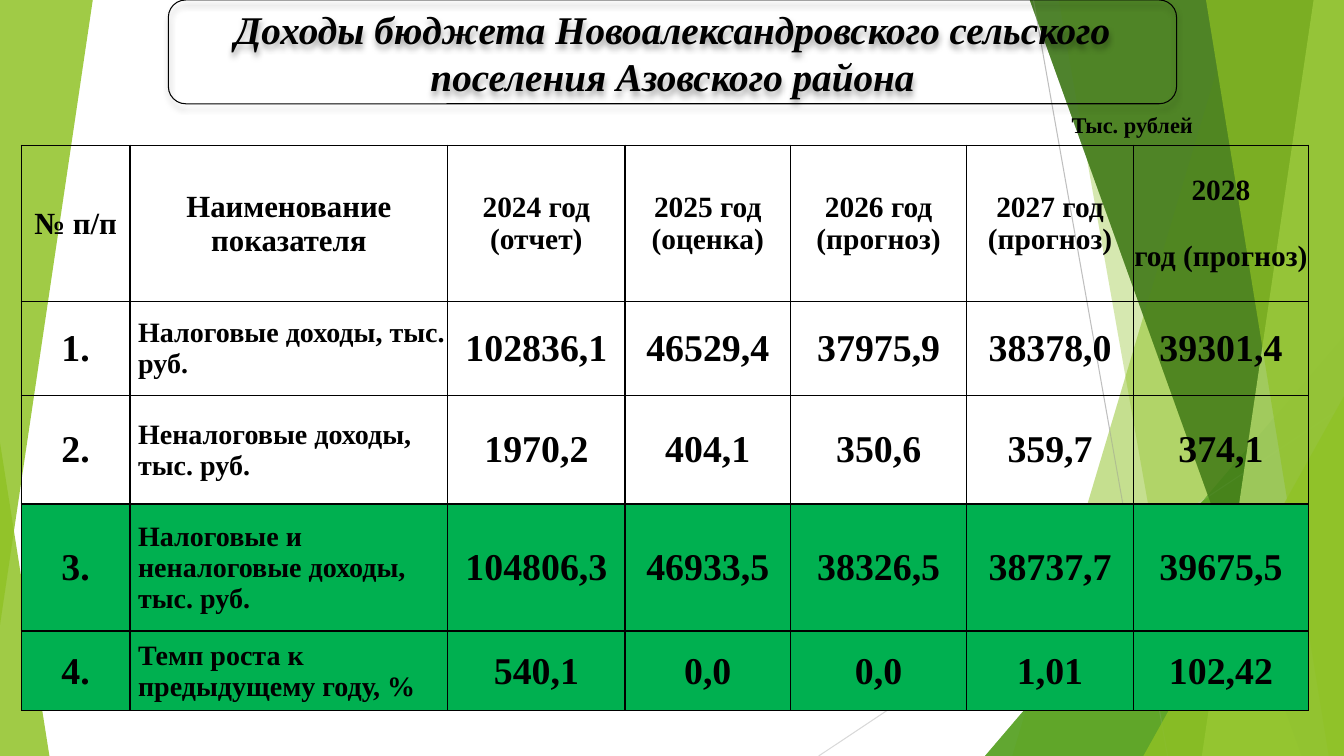
from lxml import etree
from pptx import Presentation
from pptx import util as u
from pptx.dml.color import RGBColor
from pptx.enum import shapes, text
from pptx.oxml import ns

FONT = "Times New Roman"
BLACK = RGBColor(0x00, 0x00, 0x00)
TOTAL = RGBColor(0x00, 0xB0, 0x50)
LIME = RGBColor(0x90, 0xC2, 0x26)
GREEN = RGBColor(0x54, 0xA0, 0x21)
DARK = RGBColor(0x3F, 0x78, 0x19)
PALE = RGBColor(0xC0, 0xE4, 0x74)
GREY = RGBColor(0xBF, 0xBF, 0xBF)
LIGHT = RGBColor(0xD9, 0xD9, 0xD9)

# Content
TITLE = "Доходы бюджета Новоалександровского сельского поселения Азовского района"
UNITS = "Тыс. рублей"
ROWS = [
    ["№ п/п", "Наименование показателя", "2024 год\n(отчет)", "2025 год (оценка)",
     "2026 год (прогноз)", "2027 год (прогноз)", "2028\nгод (прогноз)"],
    ["1.", "Налоговые доходы, тыс. руб.",
     "102836,1", "46529,4", "37975,9", "38378,0", "39301,4"],
    ["2.", "Неналоговые доходы,\nтыс. руб.", "1970,2", "404,1", "350,6", "359,7", "374,1"],
    ["3.", "Налоговые и неналоговые доходы, тыс. руб.",
     "104806,3", "46933,5", "38326,5", "38737,7", "39675,5"],
    ["4.", "Темп роста к предыдущему году, %", "540,1", "0,0", "0,0", "1,01", "102,42"],
]
COLS = [1.08, 3.15, 1.76, 1.64, 1.75, 1.65, 1.74]
HEIGHTS = [1.55, 0.93, 1.08, 1.26, 0.79]
FIRST_TOTAL_ROW = 3

# Facets: top edge and bottom edge x of the slanted side, colour, opacity
# Triangles: left, top, width, height, apex, rotation, colour, opacity
TOP, BOTTOM, RIGHT = -0.01, 7.5, 13.33
RIGHT_FACETS = [
    (12.28, 10.04, LIME, 30),
    (10.5, 11.83, LIME, 20),
    (9.77, 3.33, 3.56, 4.17, 1, 0, GREEN, 72),
    (10.21, 12.91, DARK, 70),
    (13.03, 11.92, PALE, 70),
    (11.96, 13.18, LIME, 65),
    (11.34, 3.93, 1.99, 3.57, 1, 0, LIME, 80),
]
LOWER_LEFT = (0, 4.39, 0.49, 3.11, 0, 0, LIME, 85)
UPPER_LEFT = (0, 0, 0.92, 6.2, 1, 180, LIME, 85)
RAYS = [(10.25, 0, 11.58, 7.5, GREY), (13.33, 4.03, 8.12, 7.5, LIGHT)]

prs = Presentation()
prs.slide_width, prs.slide_height = u.Inches(13.33), u.Inches(7.5)
s = prs.slides.add_slide(prs.slide_layouts[6])


def sub(parent, tag, **attrs):
    return etree.SubElement(parent, ns.qn(tag), attrs)


def paint(sp, color, opacity):
    sp.shadow.inherit = False
    sp.fill.solid()
    sp.fill.fore_color.rgb = color
    sp.line.fill.background()
    clr = sp.fill._xPr.find(".//" + ns.qn("a:srgbClr"))
    sub(clr, "a:alpha", val=str(opacity * 1000))


def add_facet(top_x, bottom_x, color, opacity):
    points = [(top_x, TOP), (RIGHT, TOP), (RIGHT, BOTTOM), (bottom_x, BOTTOM)]
    points = [(u.Inches(x), u.Inches(y)) for x, y in points]
    builder = s.shapes.build_freeform(*points[0], scale=1.0)
    builder.add_line_segments(points[1:], close=True)
    paint(builder.convert_to_shape(), color, opacity)


def add_triangle(x, y, w, h, apex, rotation, color, opacity):
    sp = s.shapes.add_shape(shapes.MSO_SHAPE.ISOSCELES_TRIANGLE,
                            *map(u.Inches, (x, y, w, h)))
    sp.adjustments[0] = apex
    sp.rotation = rotation
    paint(sp, color, opacity)


def add_right_facets():
    for facet in RIGHT_FACETS:
        (add_facet if len(facet) == 4 else add_triangle)(*facet)


def write(tf, content, size, align, italic=False, gap=0):
    style = {"name": FONT, "size": u.Pt(size), "bold": True, "italic": italic}
    for i, line in enumerate(content.split("\n")):
        p = tf.paragraphs[0] if i == 0 else tf.add_paragraph()
        p.alignment = align
        if i and gap:
            p.space_before = u.Pt(gap)
        r = p.add_run()
        r.text = line
        for key, value in style.items():
            setattr(r.font, key, value)
        r.font.color.rgb = BLACK


def set_borders(cell):
    tcPr = cell._tc.get_or_add_tcPr()
    for side in ("L", "R", "T", "B"):
        ln = sub(tcPr, "a:ln" + side, w=str(u.Pt(1)))
        sub(sub(ln, "a:solidFill"), "a:srgbClr", val=str(BLACK))


# Background
add_right_facets()
add_triangle(*LOWER_LEFT)
for x1, y1, x2, y2, color in RAYS:
    ray = s.shapes.add_connector(shapes.MSO_CONNECTOR.STRAIGHT,
                                 *map(u.Inches, (x1, y1, x2, y2)))
    ray.line.color.rgb = color
    ray.line.width = u.Pt(0.75)
    sub(ray._element.spPr, "a:effectLst")
add_right_facets()
add_triangle(*UPPER_LEFT)

# Income table
table = s.shapes.add_table(len(ROWS), len(COLS), u.Inches(0.21), u.Inches(1.44),
                           u.Inches(sum(COLS)), u.Inches(sum(HEIGHTS))).table
table.first_row = table.horz_banding = False
for column, width in zip(table.columns, COLS):
    column.width = u.Inches(width)
for r, (row, height) in enumerate(zip(ROWS, HEIGHTS)):
    table.rows[r].height = u.Inches(height)
    for c, content in enumerate(row):
        cell = table.cell(r, c)
        label = r > 0 and c == 1
        layout = {"margin_left": u.Inches(0.08 if label else 0.01),
                  "margin_right": u.Inches(0.01), "margin_top": u.Inches(0.01),
                  "margin_bottom": 0, "vertical_anchor": text.MSO_ANCHOR.MIDDLE}
        for key, value in layout.items():
            setattr(cell, key, value)
        set_borders(cell)
        if r >= FIRST_TOTAL_ROW:
            cell.fill.solid()
            cell.fill.fore_color.rgb = TOTAL
        else:
            cell.fill.background()
        if r == 0:
            size = 22 if c < 2 else 21
        else:
            size = 20 if label else 27
        last_header = r == 0 and c == len(COLS) - 1
        write(cell.text_frame, content, size,
              text.PP_ALIGN.LEFT if label else text.PP_ALIGN.CENTER,
              gap=24 if last_header else 0)

# Title frame with a soft shadow
sp = s.shapes.add_shape(shapes.MSO_SHAPE.ROUNDED_RECTANGLE,
                        *map(u.Inches, (1.67, 0, 10, 1.03)))
sp.fill.background()
sp.line.color.rgb = BLACK
sp.line.width = u.Pt(0.75)
sp.shadow.inherit = False
shadow = sub(sp._element.spPr.find(ns.qn("a:effectLst")), "a:outerShdw",
             blurRad=str(u.Pt(4)), dist=str(u.Pt(3)), dir="5400000", rotWithShape="0")
sub(sub(shadow, "a:srgbClr", val=str(BLACK)), "a:alpha", val="35000")
tf = sp.text_frame
tf.word_wrap = True
tf.vertical_anchor = text.MSO_ANCHOR.MIDDLE
for side in ("left", "right", "top", "bottom"):
    setattr(tf, "margin_" + side, 0)
write(tf, TITLE, 28, text.PP_ALIGN.CENTER, italic=True)

# Units
tf = s.shapes.add_textbox(*map(u.Inches, (10.53, 1.05, 1.85, 0.37))).text_frame
tf.word_wrap = True
tf.auto_size = text.MSO_AUTO_SIZE.SHAPE_TO_FIT_TEXT
write(tf, UNITS, 16, text.PP_ALIGN.LEFT)

prs.save("out.pptx")
